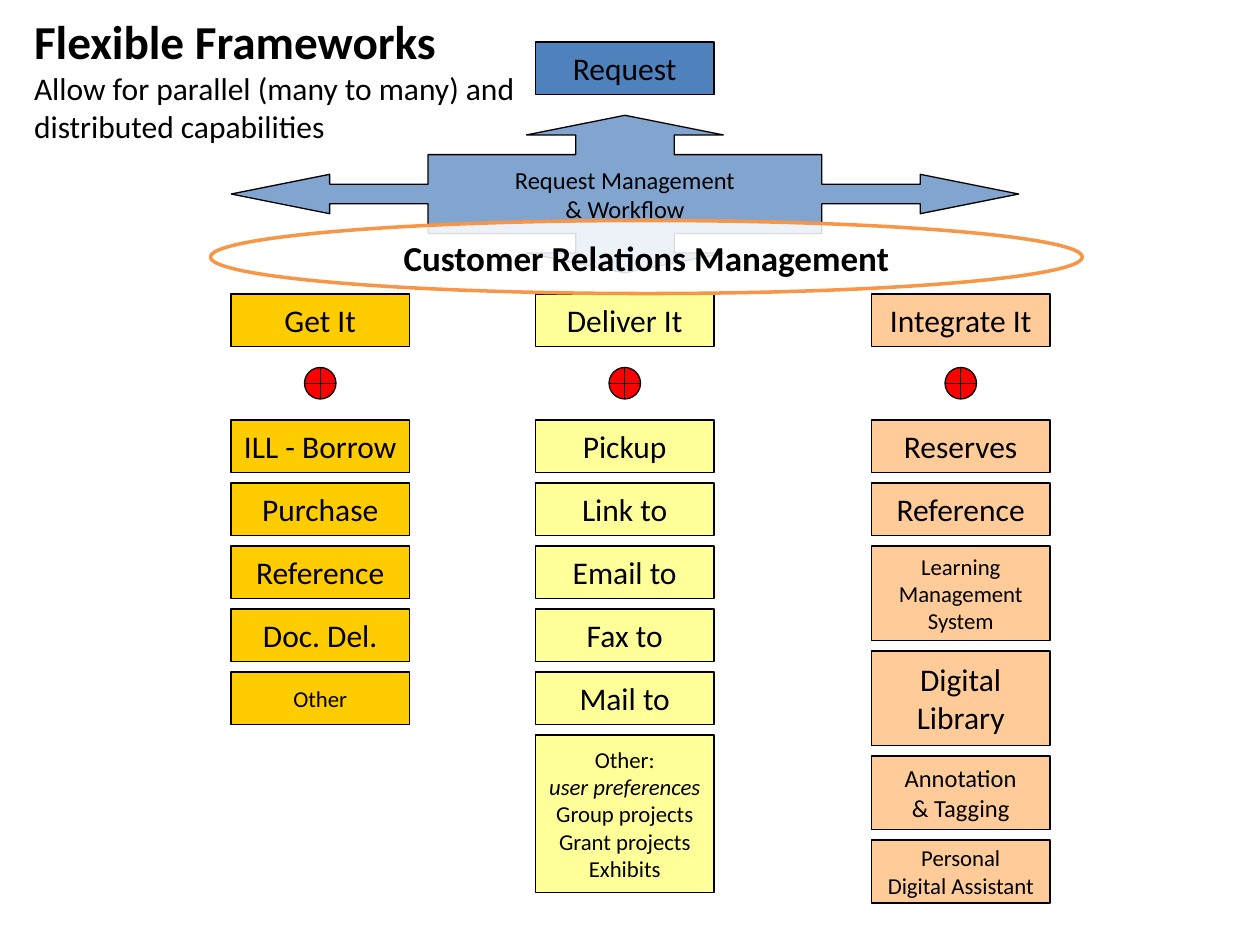
from dataclasses import dataclass, field

from lxml import etree
from pptx import Presentation
from pptx import util as u
from pptx.dml.color import RGBColor
from pptx.enum import shapes, text
from pptx.oxml.ns import qn


@dataclass(frozen=True)
class Theme:
    font: str = "Calibri"
    ink: str = "000000"
    blue: str = "4F81BD"
    gold: str = "FFCC00"
    yellow: str = "FFFF99"
    peach: str = "FFCC99"
    red: str = "FF0000"
    white: str = "FFFFFF"
    orange: str = "F79646"
    heading: float = 27
    banner: float = 20
    body: float = 18
    medium: float = 14
    small: float = 13


THEME = Theme()
UNIT = 1 / 12  # layout grid, inches
BOX_W, BOX_H, GAP = 17 * UNIT, 5 * UNIT, UNIT
HEADER_TOP, JUNCTION_TOP, LIST_TOP = 28 * UNIT, 35 * UNIT, 40 * UNIT
JUNCTION_SIZE = 3 * UNIT


@dataclass(frozen=True)
class Item:
    lines: tuple[str, ...]
    size: float = THEME.body
    height: float = BOX_H
    italic_lines: tuple[str, ...] = ()


@dataclass(frozen=True)
class Column:
    header: str
    left: float
    color: str
    items: list[Item] = field(default_factory=list)


COLUMNS = [
    Column("Get It", 22 * UNIT, THEME.gold, [
        Item(("ILL - Borrow",)),
        Item(("Purchase",)),
        Item(("Reference",)),
        Item(("Doc. Del.",)),
        Item(("Other",), THEME.small),
    ]),
    Column("Deliver It", 51 * UNIT, THEME.yellow, [
        Item(("Pickup",)),
        Item(("Link to",)),
        Item(("Email to",)),
        Item(("Fax to",)),
        Item(("Mail to",)),
        Item(("Other:", "user preferences", "Group projects", "Grant projects", "Exhibits"),
             THEME.small, 15 * UNIT, ("user preferences",)),
    ]),
    Column("Integrate It", 83 * UNIT, THEME.peach, [
        Item(("Reserves",)),
        Item(("Reference",)),
        Item(("Learning", "Management", "System"), THEME.small, 9 * UNIT),
        Item(("Digital", "Library"), height=9 * UNIT),
        Item(("Annotation", "& Tagging"), THEME.medium, 7 * UNIT),
        Item(("Personal", "Digital Assistant"), THEME.small, 6 * UNIT),
    ]),
]


def set_font(font, size: float, **extra) -> None:
    values = {"name": THEME.font, "size": u.Pt(size), **extra}
    for name, value in values.items():
        setattr(font, name, value)
    font.color.rgb = RGBColor.from_string(THEME.ink)


def paint(shape, color: str, line: str = THEME.ink, width: float = 0.75,
          opacity: int = 100) -> None:
    shape.shadow.inherit = False
    shape.fill.solid()
    shape.fill.fore_color.rgb = RGBColor.from_string(color)
    shape.line.color.rgb = RGBColor.from_string(line)
    shape.line.width = u.Pt(width)
    if opacity < 100:
        tint = shape.fill._xPr.find(qn("a:solidFill"))[0]
        etree.SubElement(tint, qn("a:alpha"), val=str(opacity * 1000))


def write(shape, item: Item, wrap: bool = False, bold: bool = False) -> None:
    frame = shape.text_frame
    frame.word_wrap = wrap
    frame.vertical_anchor = text.MSO_ANCHOR.MIDDLE
    for index, line in enumerate(item.lines):
        paragraph = frame.add_paragraph() if index else frame.paragraphs[0]
        paragraph.alignment = text.PP_ALIGN.CENTER
        run = paragraph.add_run()
        run.text = line
        set_font(run.font, item.size, bold=bold, italic=line in item.italic_lines)


def add_preset(slide, kind, left: float, top: float, width: float, height: float):
    return slide.shapes.add_shape(
        kind, u.Inches(left), u.Inches(top), u.Inches(width), u.Inches(height))


def add_box(slide, left: float, top: float, item: Item, color: str) -> None:
    box = add_preset(slide, shapes.MSO_SHAPE.RECTANGLE, left, top, BOX_W, item.height)
    paint(box, color)
    write(box, item)


def add_column(slide, column: Column) -> None:
    add_box(slide, column.left, HEADER_TOP, Item((column.header,)), column.color)
    junction = add_preset(slide, shapes.MSO_SHAPE.FLOWCHART_OR,
                          column.left + (BOX_W - JUNCTION_SIZE) / 2, JUNCTION_TOP,
                          JUNCTION_SIZE, JUNCTION_SIZE)
    paint(junction, THEME.red)
    top = LIST_TOP
    for item in column.items:
        add_box(slide, column.left, top, item, column.color)
        top += item.height + GAP


def add_workflow_arrow(slide) -> None:
    """Four-way arrow: one quarter in eighths of the half size, then mirrored."""
    center_x, center_y, step_x, step_y = 4.96, 1.54, 6.25 / 16, 1.25 / 16
    quarter = [(0, -8), (2, -6), (1, -6), (1, -4), (4, -4), (4, -1), (6, -1), (6, -2), (8, 0)]
    right = quarter + [(x, -y) for x, y in quarter[-2::-1]]
    outline = right + [(-x, y) for x, y in right[-2:0:-1]]
    points = [(u.Inches(center_x + x * step_x), u.Inches(center_y + y * step_y))
              for x, y in outline]
    builder = slide.shapes.build_freeform(*points[0])
    builder.add_line_segments(points[1:], close=True)
    arrow = builder.convert_to_shape()
    paint(arrow, THEME.blue, opacity=71)
    write(arrow, Item(("Request Management", "& Workflow"), THEME.medium))


def add_title(slide) -> None:
    title = slide.shapes.title
    place = {"left": 0.17, "top": 0, "width": 4.25, "height": 1.25}
    for name, value in place.items():
        setattr(title, name, u.Inches(value))
    frame = title.text_frame
    frame.word_wrap = True
    frame.auto_size = text.MSO_AUTO_SIZE.NONE
    frame.vertical_anchor = text.MSO_ANCHOR.MIDDLE
    paragraph = frame.paragraphs[0]
    paragraph.alignment = text.PP_ALIGN.LEFT
    heading = paragraph.add_run()
    heading.text = "Flexible Frameworks"
    set_font(heading.font, THEME.heading, bold=True)
    paragraph.add_line_break()
    subtitle = paragraph.add_run()
    subtitle.text = "Allow for parallel (many to many) and distributed capabilities"
    set_font(subtitle.font, THEME.body, bold=False)


def main() -> None:
    deck = Presentation()
    deck.slide_width, deck.slide_height = u.Inches(10), u.Inches(7.5)
    slide = deck.slides.add_slide(deck.slide_layouts[5])

    # Title and starting request
    add_title(slide)
    add_box(slide, COLUMNS[1].left, 4 * UNIT, Item(("Request",)), THEME.blue)

    # Capability columns
    for column in COLUMNS:
        add_column(slide, column)

    # Workflow arrow, overlaid by the customer relations band
    add_workflow_arrow(slide)
    band = add_preset(slide, shapes.MSO_SHAPE.OVAL, 1.67, 1.75, 6.92, 0.58)
    paint(band, THEME.white, THEME.orange, 2, opacity=86)
    write(band, Item(("Customer Relations Management",), THEME.banner), wrap=True, bold=True)

    deck.save("out.pptx")


if __name__ == "__main__":
    main()
